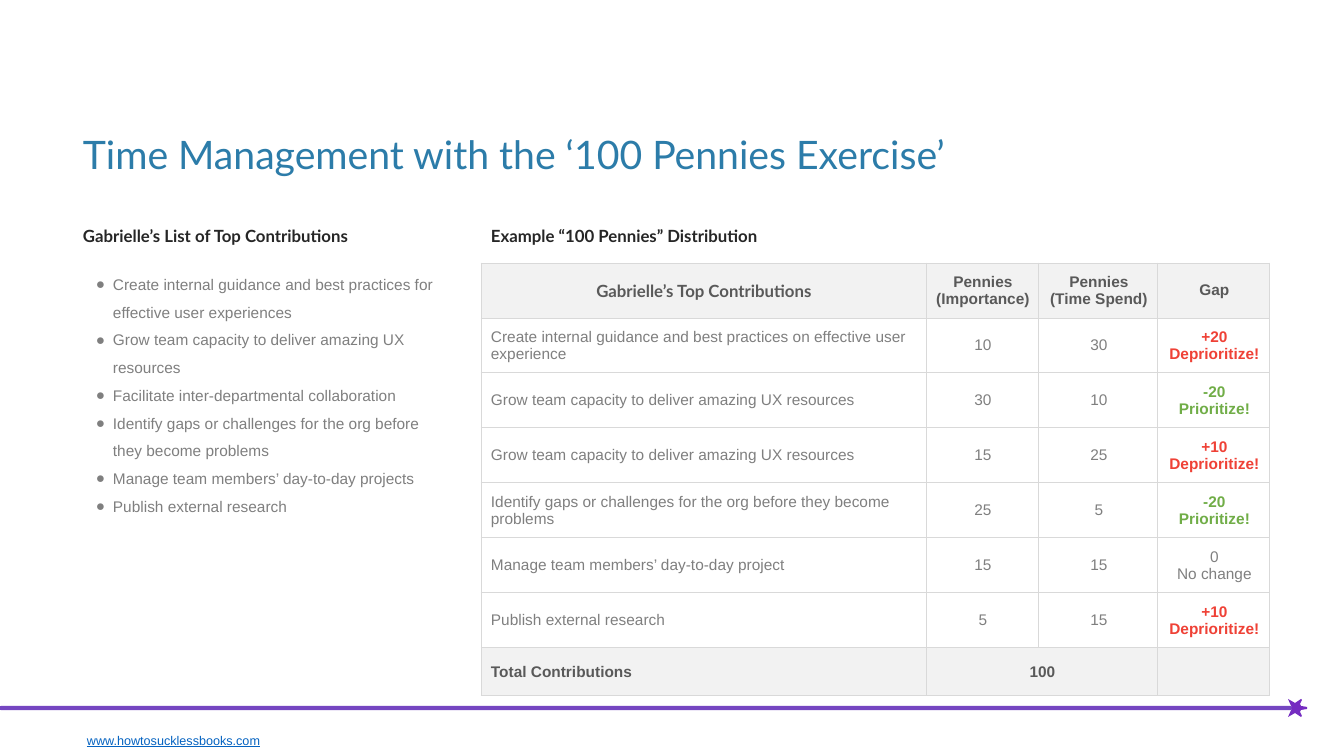
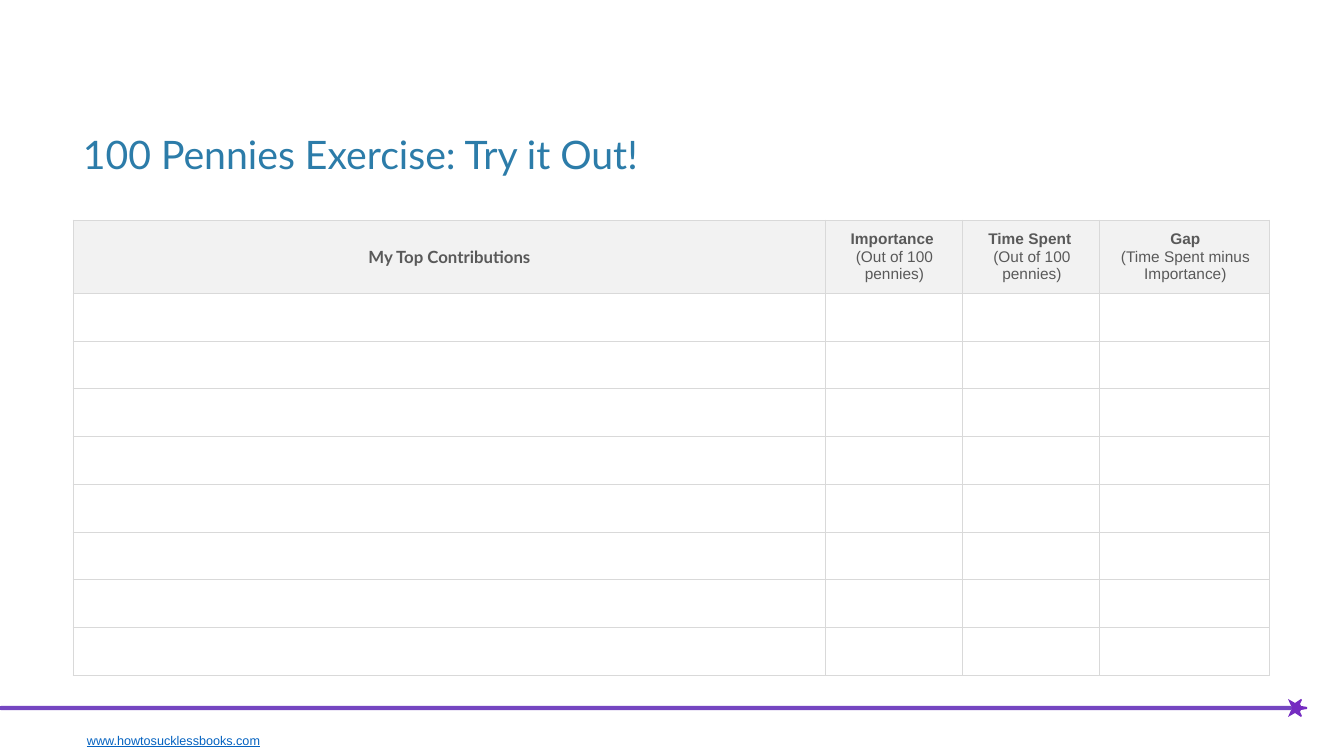
from lxml import etree
from pptx import Presentation
from pptx.dml.color import RGBColor
from pptx.enum.shapes import MSO_SHAPE
from pptx.enum.text import MSO_ANCHOR, PP_ALIGN
from pptx.oxml.ns import qn
from pptx.util import Pt

LEFT, CENTER = PP_ALIGN.LEFT, PP_ALIGN.CENTER
MIDDLE = MSO_ANCHOR.MIDDLE
ROUNDED = MSO_SHAPE.ROUNDED_RECTANGLE

EMU_PER_PX = 914400 / 100.8
COLORS = {
    "title": "2C7CA9",
    "heading": "262626",
    "body": "7F7F7F",
    "label": "595959",
    "over": "EF4136",
    "under": "70AD47",
    "address": "0563C1",
    "band": "7546C1",
    "star": "752CC1",
    "border": "D9D9D9",
    "shade": "F2F2F2",
    "white": "FFFFFF",
}
# font, size, colour, bold
STYLES = {
    "title": ("Lato", 28, "title", False),
    "heading": ("Lato", 12, "heading", True),
    "body": ("Arial", 11, "body", False),
    "lead": ("Lato", 12, "label", True),
    "label": ("Arial", 11, "label", True),
    "hint": ("Arial", 11, "label", False),
    "over": ("Arial", 11, "over", True),
    "under": ("Arial", 11, "under", True),
    "address": ("Arial", 9, "address", False),
}
BOX_INSETS = (10, 5, 10, 5)
CELL_INSETS = (10, 9, 9, 9)
MARGIN = 73
CONTENT_TOP = 221

CONTRIBUTIONS = [
    "Create internal guidance and best practices for effective user experiences",
    "Grow team capacity to deliver amazing UX resources",
    "Facilitate inter-departmental collaboration",
    "Identify gaps or challenges for the org before they become problems",
    "Manage team members’ day-to-day projects",
    "Publish external research",
]
# contribution, importance, time spent
PENNIES = [
    ("Create internal guidance and best practices on effective user experience", 10, 30),
    ("Grow team capacity to deliver amazing UX resources", 30, 10),
    ("Grow team capacity to deliver amazing UX resources", 15, 25),
    ("Identify gaps or challenges for the org before they become problems", 25, 5),
    ("Manage team members’ day-to-day project", 15, 15),
    ("Publish external research", 5, 15),
]


def px(length):
    return round(length * EMU_PER_PX)


def rgb(color):
    return RGBColor.from_string(COLORS[color])


def set_insets(target, insets):
    (target.margin_left, target.margin_top,
     target.margin_right, target.margin_bottom) = map(px, insets)


def write(frame, text, styles, align=LEFT):
    """Fill a frame; each line takes its own style, the last one repeating."""
    frame.text = text
    for index, paragraph in enumerate(frame.paragraphs):
        font_name, size, color, bold = STYLES[styles[min(index, len(styles) - 1)]]
        paragraph.alignment = align
        for run in paragraph.runs:
            run.font.name = font_name
            run.font.size = Pt(size)
            run.font.bold = bold
            run.font.color.rgb = rgb(color)
        if not paragraph.runs:
            etree.SubElement(paragraph._p, qn("a:endParaRPr"), sz=str(size * 100))


def add_bullet(paragraph):
    properties = paragraph._p.get_or_add_pPr()
    properties.set("marL", str(px(30)))
    properties.set("indent", str(px(-17)))
    bullet_color = etree.SubElement(properties, qn("a:buClr"))
    etree.SubElement(bullet_color, qn("a:srgbClr"), val=COLORS["body"])
    etree.SubElement(properties, qn("a:buFont"), typeface="Arial")
    etree.SubElement(properties, qn("a:buChar"), char="●")
    paragraph.line_spacing = 1.5


def add_borders(cell):
    properties = cell._tc.get_or_add_tcPr()
    for position, side in enumerate(("lnL", "lnR", "lnT", "lnB")):
        line = etree.Element(qn(f"a:{side}"), w=str(Pt(0.75)))
        fill = etree.SubElement(line, qn("a:solidFill"))
        etree.SubElement(fill, qn("a:srgbClr"), val=COLORS["border"])
        properties.insert(position, line)


class Deck:
    """Holds the presentation and the slide being built."""

    def __init__(self):
        self.presentation = Presentation()
        self.presentation.slide_width = px(1344)
        self.presentation.slide_height = px(756)
        self.slide = None

    def start_slide(self, title):
        layout = self.presentation.slide_layouts[6]
        self.slide = self.presentation.slides.add_slide(layout)
        self.footer()
        self.text(MARGIN, 125, 1197, 57, title, ["title"])

    def text(self, left, top, width, height, text, styles, insets=BOX_INSETS):
        box = self.slide.shapes.add_textbox(px(left), px(top), px(width), px(height))
        frame = box.text_frame
        frame.word_wrap = True
        set_insets(frame, insets)
        write(frame, text, styles)
        return frame

    def paint(self, shape, color):
        shape.shadow.inherit = False
        shape.fill.solid()
        shape.fill.fore_color.rgb = rgb(color)
        shape.line.fill.background()

    def footer(self):
        address = self.text(85, 723, 228, 19, "www.howtosucklessbooks.com",
                            ["address"], (2, 2, 2, 2)).paragraphs[0]
        address.line_spacing = 1.5
        address.runs[0].font.underline = True

        band = self.slide.shapes.add_shape(ROUNDED, px(-1), px(706), px(1293), px(4))
        band.adjustments[0] = 0.5
        self.paint(band, "band")
        self.star(708)

    def star(self, axis):
        """Draw the star at the band's end, mirrored about a horizontal axis."""
        upper = [(1288, -9), (1295, -5), (1301, -9), (1302, -8),
                 (1300, -4), (1301, -2), (1307, -1)]
        lower = [(x, -rise) for x, rise in reversed(upper)]
        points = [(x, axis + rise) for x, rise in upper + lower + [(1292, 0)]]
        builder = self.slide.shapes.build_freeform(*points[0], scale=EMU_PER_PX)
        builder.add_line_segments(points[1:], close=True)
        self.paint(builder.convert_to_shape(), "star")

    def bullets(self, left, top, width, height, heading, items):
        frame = self.text(left, top, width, height,
                          "\n".join([heading, *items]), ["heading", "body"])
        for paragraph in frame.paragraphs[1:]:
            add_bullet(paragraph)
        frame.paragraphs[1].space_before = Pt(14)

    def table(self, left, top, bottom, widths, rows, header_height, total_height=0):
        """Draw rows of (text, styles, align); body rows share the height left over."""
        grid = self.slide.shapes.add_table(
            len(rows), len(widths), px(left), px(top),
            px(sum(widths)), px(bottom - top)).table
        grid.first_row = grid.horz_banding = False
        for column, width in zip(grid.columns, widths):
            column.width = px(width)

        body_count = len(rows) - 1 - bool(total_height)
        body_height = px(bottom - top - header_height - total_height) // body_count
        heights = [px(header_height)] + [body_height] * body_count + [px(total_height)]
        for row_index, (row, height) in enumerate(zip(rows, heights)):
            grid.rows[row_index].height = height
            shaded = row_index == 0 or row_index > body_count
            for column_index, (text, styles, align) in enumerate(row):
                cell = grid.cell(row_index, column_index)
                write(cell.text_frame, text, styles, align)
                set_insets(cell, CELL_INSETS)
                cell.vertical_anchor = MIDDLE
                cell.fill.solid()
                cell.fill.fore_color.rgb = rgb("shade" if shaded else "white")
                add_borders(cell)
        return grid


def contribution_row(contribution, importance, time_spent):
    gap = time_spent - importance
    if gap > 0:
        advice, style = "Deprioritize!", "over"
    elif gap < 0:
        advice, style = "Prioritize!", "under"
    else:
        advice, style = "No change", "body"
    sign = "+" if gap > 0 else ""
    return [
        (contribution, ["body"], LEFT),
        (str(importance), ["body"], CENTER),
        (str(time_spent), ["body"], CENTER),
        (f"{sign}{gap}\n{advice}", [style], CENTER),
    ]


def build_example(deck):
    deck.start_slide("Time Management with the ‘100 Pennies Exercise’")
    deck.bullets(MARGIN, CONTENT_TOP, 381, 425,
                 "Gabrielle’s List of Top Contributions", CONTRIBUTIONS)
    deck.text(481, CONTENT_TOP, 381, 34,
              "Example “100 Pennies” Distribution", ["heading"])

    header = [("Gabrielle’s Top Contributions", ["lead"], CENTER)]
    header += [(label, ["label"], CENTER) for label in
               ("Pennies\n(Importance)", "Pennies\n(Time Spend)", "Gap")]
    blank = ("", ["label"], CENTER)
    total = [("Total Contributions", ["label"], LEFT),
             ("100", ["label"], CENTER), blank, blank]
    body = [contribution_row(*entry) for entry in PENNIES]
    grid = deck.table(481, 263, 692, (445, 113, 119, 112),
                      [header, *body, total], 55, 48)
    last_row = len(body) + 1
    grid.cell(last_row, 1).merge(grid.cell(last_row, 2))


def build_worksheet(deck):
    deck.start_slide("100 Pennies Exercise: Try it Out!")
    header = [("My Top Contributions", ["lead"], CENTER)]
    header += [(label, ["label", "hint"], CENTER) for label in (
        "Importance \n(Out of 100 pennies)",
        "Time Spent \n(Out of 100 pennies)",
        "Gap\n(Time Spent minus Importance)",
    )]
    empty_row = [("", ["body"], LEFT)] * len(header)
    deck.table(MARGIN, 220, 675, (752, 138, 137, 170),
               [header] + [empty_row] * 8, 73)


def main():
    deck = Deck()
    build_example(deck)
    build_worksheet(deck)
    deck.presentation.save("out.pptx")


if __name__ == "__main__":
    main()
